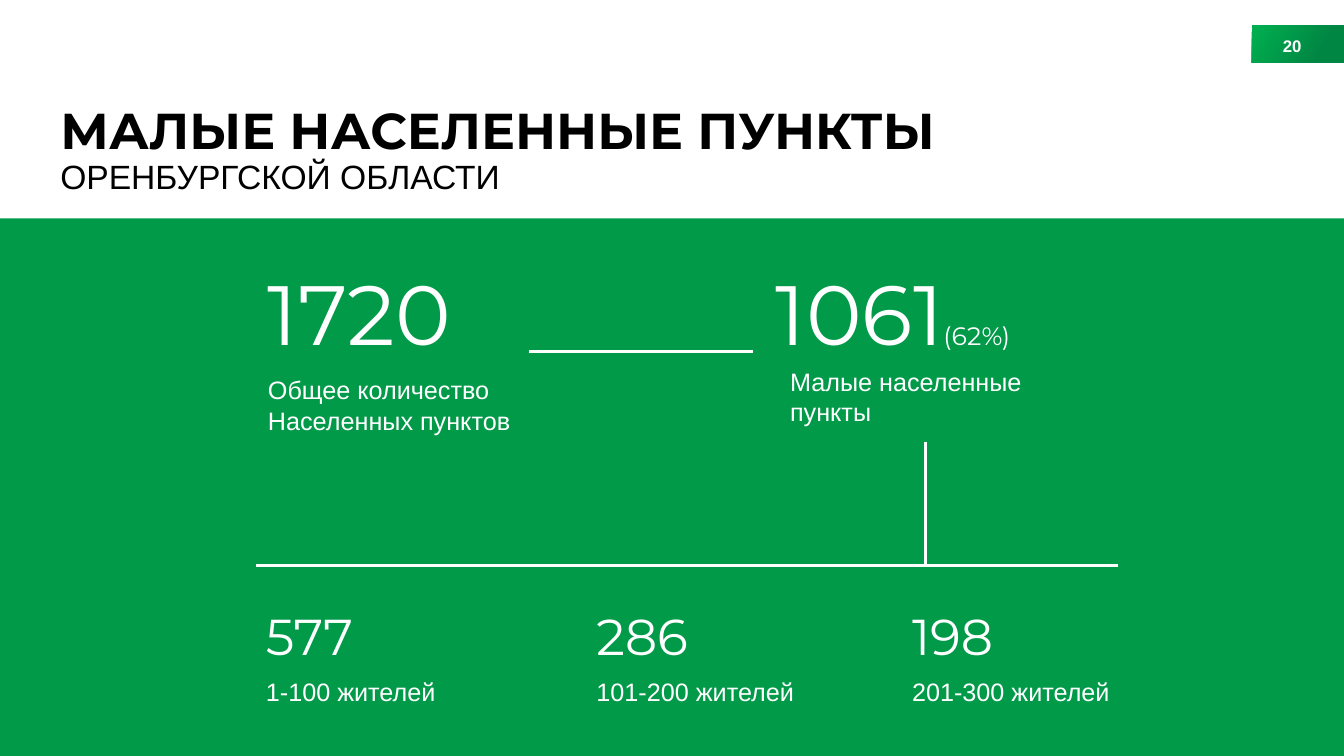
from dataclasses import dataclass

from lxml.etree import SubElement
from pptx import Presentation
from pptx.dml.color import RGBColor
from pptx.enum.shapes import MSO_CONNECTOR, MSO_SHAPE
from pptx.enum.text import MSO_ANCHOR, PP_ALIGN
from pptx.oxml.ns import qn
from pptx.util import Pt


@dataclass(frozen=True)
class Theme:
    white: RGBColor = RGBColor(0xFF, 0xFF, 0xFF)
    black: RGBColor = RGBColor(0x00, 0x00, 0x00)
    green: RGBColor = RGBColor(0x00, 0x9A, 0x49)
    badge_light: RGBColor = RGBColor(0x00, 0xB0, 0x50)
    badge_dark: RGBColor = RGBColor(0x00, 0x86, 0x43)
    display_font: str = "Montserrat"
    body_font: str = "Arial"
    hero: float = 60
    large: float = 36
    subtitle: float = 24
    body: float = 18
    small: float = 12
    line_width: float = 2.25


class SlideBuilder:
    def __init__(self, slide, theme):
        self.slide = slide
        self.theme = theme

    def rectangle(self, left, top, width, height):
        shape = self.slide.shapes.add_shape(
            MSO_SHAPE.RECTANGLE, Pt(left), Pt(top), Pt(width), Pt(height))
        shape.shadow.inherit = False
        shape.line.fill.background()
        return shape

    def panel(self, left, top, width, height):
        shape = self.rectangle(left, top, width, height)
        shape.fill.solid()
        shape.fill.fore_color.rgb = self.theme.green

    def badge(self, left, top, width, height):
        fill = self.rectangle(left, top, width, height).fill
        fill.gradient()
        fill.gradient_angle = 330
        colors = (self.theme.badge_light, self.theme.badge_dark)
        for stop, position, color in zip(fill.gradient_stops, (0, 0.75), colors):
            stop.position = position
            stop.color.rgb = color

    def line(self, start_x, start_y, end_x, end_y):
        connector = self.slide.shapes.add_connector(
            MSO_CONNECTOR.STRAIGHT, Pt(start_x), Pt(start_y), Pt(end_x), Pt(end_y))
        connector.line.color.rgb = self.theme.white
        connector.line.width = Pt(self.theme.line_width)
        SubElement(connector._element.spPr, qn("a:effectLst"))

    def text_frame(self, left, top, width, height, wrap=True, anchor=MSO_ANCHOR.TOP):
        box = self.slide.shapes.add_textbox(Pt(left), Pt(top), Pt(width), Pt(height))
        box.text_frame.word_wrap = wrap
        box.text_frame.vertical_anchor = anchor
        return box.text_frame

    def run(self, paragraph, text, size, font, color=None, bold=False):
        run = paragraph.add_run()
        run.text = text
        run.font.size = Pt(size)
        run.font.name = font
        run.font.bold = bold
        run.font.color.rgb = color or self.theme.white

    def number(self, left, top, width, height, size, value, share=""):
        paragraph = self.text_frame(left, top, width, height).paragraphs[0]
        self.run(paragraph, value, size, self.theme.display_font)
        if share:
            self.run(paragraph, share, self.theme.body, self.theme.display_font)

    def caption(self, left, top, width, height, lines, wrap=True):
        frame = self.text_frame(left, top, width, height, wrap)
        for index, line in enumerate(lines):
            paragraph = frame.add_paragraph() if index else frame.paragraphs[0]
            self.run(paragraph, line, self.theme.body, self.theme.body_font)

    def title(self, left, top, width, height, heading, subheading):
        frame = self.text_frame(left, top, width, height, anchor=MSO_ANCHOR.MIDDLE)
        paragraph = frame.paragraphs[0]
        paragraph.line_spacing = 0.9
        theme = self.theme
        self.run(paragraph, heading, theme.large, theme.display_font, theme.black, True)
        paragraph.add_line_break()
        self.run(paragraph, subheading, theme.subtitle, theme.body_font, theme.black)

    def page_number(self, left, top, width, height, value):
        frame = self.text_frame(left, top, width, height, anchor=MSO_ANCHOR.MIDDLE)
        paragraph = frame.paragraphs[0]
        paragraph.alignment = PP_ALIGN.RIGHT
        self.run(paragraph, value, self.theme.small, self.theme.body_font, bold=True)


def main():
    presentation = Presentation()
    presentation.slide_width, presentation.slide_height = Pt(960), Pt(540)
    slide = presentation.slides.add_slide(presentation.slide_layouts[6])
    theme = Theme()
    builder = SlideBuilder(slide, theme)

    # Page badge, green panel and title
    builder.badge(894, 18, 66, 27)
    builder.page_number(720.7, 18, 216, 28.8, "20")
    builder.panel(0, 156, 960, 384)
    builder.title(36, 71.3, 828, 74.2, "МАЛЫЕ НАСЕЛЕННЫЕ ПУНКТЫ", "ОРЕНБУРГСКОЙ ОБЛАСТИ")

    # All settlements and the small ones among them
    builder.number(184.3, 183.6, 202.3, 90.7, theme.hero, "1720")
    builder.caption(184.3, 264.2, 202.3, 57.6, ["Общее количество", "Населенных пунктов"])
    builder.number(547.2, 183.6, 279.4, 90.7, theme.hero, "1061", "(62%)")
    builder.caption(557.3, 257.8, 231.1, 57.6, ["Малые населенные пункты"])

    # Lines leading to the breakdown
    branch_x, divider_y = 661, 404
    builder.line(378, 251.3, 537.8, 251.3)
    builder.line(branch_x, 315.4, branch_x, divider_y)
    builder.line(182.9, divider_y, 798.5, divider_y)

    # Breakdown by number of residents
    groups = [
        (182.9, 146.2, "577", "1-100 жителей"),
        (419, 167.8, "286", "101-200 жителей"),
        (644.4, 167.8, "198", "201-300 жителей"),
    ]
    for left, caption_width, count, residents in groups:
        builder.number(left, 428.4, 155.5, 57.6, theme.large, count)
        builder.caption(left, 479.5, caption_width, 33.1, [residents], wrap=False)

    presentation.save("out.pptx")


if __name__ == "__main__":
    main()
